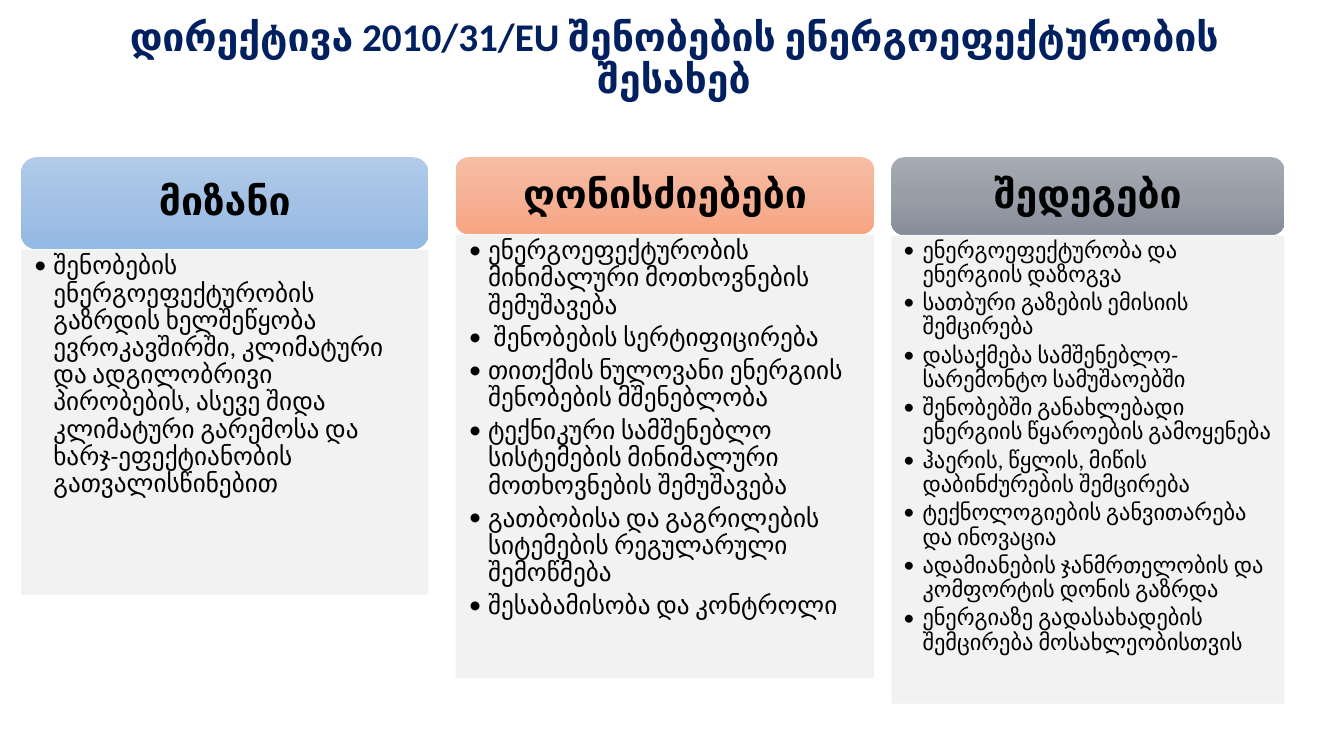
from copy import deepcopy
from dataclasses import dataclass

from lxml.etree import SubElement
from pptx import Presentation
from pptx.dml.color import RGBColor
from pptx.enum.shapes import MSO_SHAPE
from pptx.enum.text import MSO_ANCHOR, PP_ALIGN
from pptx.oxml.ns import qn
from pptx.shapes.autoshape import Shape
from pptx.slide import Slide
from pptx.util import Inches, Pt


@dataclass(frozen=True)
class Theme:
    """Colours, font and type sizes of the slide."""
    font: str = "Calibri"
    title_color: str = "002060"
    text_color: str = "000000"
    panel_color: str = "F2F2F2"
    heading_size: int = 28
    line_spacing: float = 0.9


@dataclass(frozen=True)
class Column:
    """A headed panel with bullets; lengths in inches, sizes in points."""
    heading: str
    gradient: tuple[str, str, str]
    left: float
    width: float
    heading_height: float
    panel_height: float
    text_size: int
    space_after: int
    side_margin: float
    bullets: tuple[str, ...]


THEME = Theme()
COLUMN_TOP = 1.56
PANEL_GAP = 0.01
BULLET_INDENT = 0.19

TITLE = "დირექტივა 2010/31/EU შენობების ენერგოეფექტურობის შესახებ"
COLUMNS = (
    Column("მიზანი", ("B1CBE9", "A3C1E5", "93B9E4"), 0.21, 4.04, 0.91, 3.42, 18, 4, 0.13, (
        "შენობების ენერგოეფექტურობის გაზრდის ხელშეწყობა ევროკავშირში, კლიმატური და "
        "ადგილობრივი პირობების, ასევე შიდა კლიმატური გარემოსა და ხარჯ-ეფექტიანობის "
        "გათვალისწინებით",
    )),
    Column("ღონისძიებები", ("F7BDA5", "F5B196", "F8A582"), 4.52, 4.15, 0.76, 4.4, 18, 4, 0.13, (
        "ენერგოეფექტურობის მინიმალური მოთხოვნების შემუშავება",
        " შენობების სერტიფიცირება",
        "თითქმის ნულოვანი ენერგიის შენობების მშენებლობა",
        "ტექნიკური სამშენებლო სისტემების მინიმალური მოთხოვნების შემუშავება",
        "გათბობისა და გაგრილების სიტემების რეგულარული შემოწმება",
        "შესაბამისობა და კონტროლი",
    )),
    Column("შედეგები", ("A5AAB3", "999EA7", "878E9A"), 8.84, 3.9, 0.77, 4.64, 16, 3, 0.12, (
        "ენერგოეფექტურობა და ენერგიის დაზოგვა",
        "სათბური გაზების ემისიის შემცირება",
        "დასაქმება სამშენებლო-სარემონტო სამუშაოებში",
        "შენობებში განახლებადი ენერგიის წყაროების გამოყენება",
        "ჰაერის, წყლის, მიწის დაბინძურების შემცირება",
        "ტექნოლოგიების განვითარება და ინოვაცია",
        "ადამიანების ჯანმრთელობის და კომფორტის დონის გაზრდა",
        "ენერგიაზე გადასახადების შემცირება მოსახლეობისთვის",
    )),
)


def format_text(shape: Shape, size: int, color: str, bold: bool, alignment: PP_ALIGN) -> None:
    """Apply one type style to every paragraph of a shape."""
    shape.text_frame.word_wrap = True
    for paragraph in shape.text_frame.paragraphs:
        paragraph.alignment = alignment
        paragraph.line_spacing = THEME.line_spacing
        for run in paragraph.runs:
            run.font.name = THEME.font
            run.font.size = Pt(size)
            run.font.bold = bold
            run.font.color.rgb = RGBColor.from_string(color)


def fill_gradient(shape: Shape, colors: tuple[str, str, str]) -> None:
    """Fill a shape from top to bottom with three evenly spaced colours."""
    shape.fill.gradient()
    shape.fill.gradient_angle = 270
    stop_list = shape._element.spPr.find(qn("a:gradFill")).find(qn("a:gsLst"))
    stop_list.insert(1, deepcopy(stop_list[0]))
    for index, (stop, color) in enumerate(zip(shape.fill.gradient_stops, colors)):
        stop.position = index / 2
        stop.color.rgb = RGBColor.from_string(color)


def add_block(slide: Slide, kind: MSO_SHAPE, column: Column, top: float, height: float) -> Shape:
    """Add a borderless shape as wide as its column."""
    shape = slide.shapes.add_shape(
        kind, Inches(column.left), Inches(top), Inches(column.width), Inches(height))
    shape.shadow.inherit = False
    shape.line.fill.background()
    return shape


def add_bullets(panel: Shape, column: Column) -> None:
    """Write the bullet list of a column into its panel."""
    frame = panel.text_frame
    frame.text = "\n".join(column.bullets)
    frame.vertical_anchor = MSO_ANCHOR.TOP
    frame.margin_left = frame.margin_right = Inches(column.side_margin)
    frame.margin_top = frame.margin_bottom = Inches(0.03)
    for paragraph in frame.paragraphs:
        properties = paragraph._p.get_or_add_pPr()
        properties.set("marL", str(Inches(BULLET_INDENT)))
        properties.set("indent", str(-Inches(BULLET_INDENT)))
        SubElement(properties, qn("a:buFont"), typeface=THEME.font)
        SubElement(properties, qn("a:buChar"), char="•")
        paragraph.space_after = Pt(column.space_after)
    format_text(panel, column.text_size, THEME.text_color, False, PP_ALIGN.LEFT)


def add_column(slide: Slide, column: Column) -> None:
    """Draw a heading and the panel under it."""
    heading = add_block(
        slide, MSO_SHAPE.ROUNDED_RECTANGLE, column, COLUMN_TOP, column.heading_height)
    fill_gradient(heading, column.gradient)
    heading.text_frame.text = column.heading
    heading.text_frame.vertical_anchor = MSO_ANCHOR.MIDDLE
    format_text(heading, THEME.heading_size, THEME.text_color, True, PP_ALIGN.CENTER)

    panel_top = COLUMN_TOP + column.heading_height + PANEL_GAP
    panel = add_block(slide, MSO_SHAPE.RECTANGLE, column, panel_top, column.panel_height)
    panel.fill.solid()
    panel.fill.fore_color.rgb = RGBColor.from_string(THEME.panel_color)
    add_bullets(panel, column)


def add_title(slide: Slide) -> None:
    """Add the centred slide title."""
    title = slide.shapes.add_textbox(Inches(0.92), Inches(0.17), Inches(11.53), Inches(0.85))
    title.text_frame.text = TITLE
    title.text_frame.vertical_anchor = MSO_ANCHOR.MIDDLE
    format_text(title, THEME.heading_size, THEME.title_color, True, PP_ALIGN.CENTER)


def main() -> None:
    """Build and save the presentation."""
    presentation = Presentation()
    presentation.slide_width = Inches(13.33)
    presentation.slide_height = Inches(7.5)
    slide = presentation.slides.add_slide(presentation.slide_layouts[6])
    add_title(slide)
    for column in COLUMNS:
        add_column(slide, column)
    presentation.save("out.pptx")


if __name__ == "__main__":
    main()
